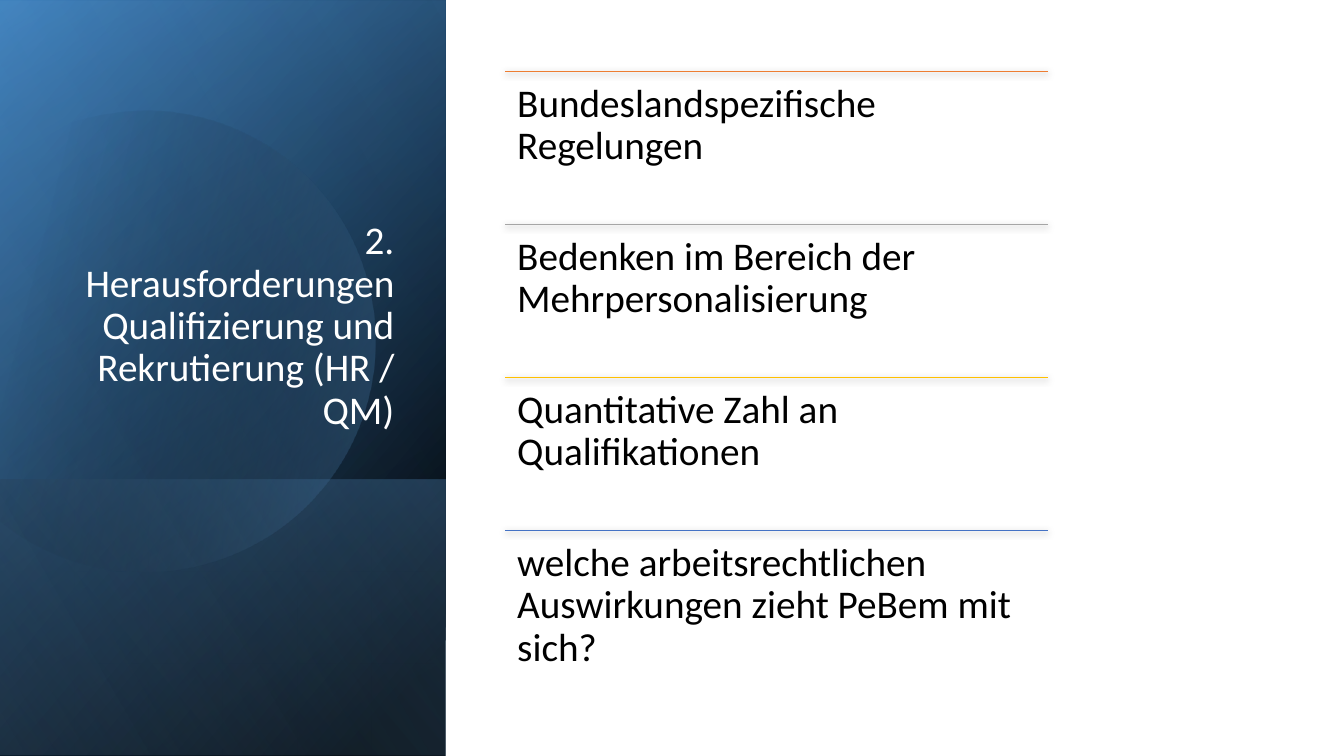
from math import cos, radians, sin

from lxml.etree import SubElement
from pptx import Presentation
from pptx.dml.color import RGBColor
from pptx.enum.shapes import MSO_CONNECTOR, MSO_SHAPE
from pptx.enum.text import MSO_ANCHOR, PP_ALIGN
from pptx.oxml.ns import qn
from pptx.util import Inches, Pt

BLACK = RGBColor(0x00, 0x00, 0x00)
WHITE = RGBColor(0xFF, 0xFF, 0xFF)
DEEP_BLUE = RGBColor(0x2E, 0x75, 0xB6)
BLUE = RGBColor(0x5B, 0x9B, 0xD5)
PALE_BLUE = RGBColor(0x9D, 0xC3, 0xE6)
ORANGE = RGBColor(0xED, 0x7D, 0x31)
GRAY = RGBColor(0xA5, 0xA5, 0xA5)
GOLD = RGBColor(0xFF, 0xC0, 0x00)
ROYAL_BLUE = RGBColor(0x44, 0x72, 0xC4)

FONT = "Calibri"
LIST_LEFT, LIST_TOP, LIST_WIDTH, LIST_HEIGHT = 5.01, 0.71, 5.38, 6.07

PANELS = [
    (-1.54, 1.54, 7.5, [(8, BLACK, 100), (100, DEEP_BLUE, 100)], 50),
    (-1.54, 1.55, 7.5, [(0, BLACK, 0), (99, BLUE, 46)], 30),
    (0.84, 3.92, 2.74, [(2, BLUE, 29), (100, BLACK, 30)], 130),
]
SHEEN = (-1.54, 1.53, 7.5, [(0, BLACK, 0), (99, PALE_BLUE, 11)], 120)

DISC_LEFT, DISC_TOP, DISC_WIDTH, DISC_HEIGHT = -0.55, 1.06, 4.27, 4.57
DISC_ROTATION = 343.9
DISC_STOPS = [(29, BLACK, 0), (100, BLUE, 43)]
DISC_OUTLINE = [
    ("moveTo", [(1.49, 1.1)]),
    ("cubicBezTo", [(2.46, 1.12), (3.35, 1.77), (3.63, 2.75)]),
    ("cubicBezTo", [(3.98, 3.97), (3.28, 5.23), (2.07, 5.58)]),
    ("cubicBezTo", [(1.31, 5.8), (0.53, 5.61), (-0.03, 5.14)]),
    ("lnTo", [(-0.15, 5.03)]),
    ("lnTo", [(-0.15, 1.75)]),
    ("lnTo", [(0, 1.61)]),
    ("cubicBezTo", [(0.23, 1.42), (0.5, 1.28), (0.8, 1.19)]),
    ("cubicBezTo", [(1.03, 1.13), (1.26, 1.1), (1.49, 1.1)]),
    ("close", []),
]

TITLE = "2. Herausforderungen Qualifizierung und Rekrutierung (HR / QM)"
CHALLENGES = [
    ("Bundeslandspezifische Regelungen", ORANGE),
    ("Bedenken im Bereich der Mehrpersonalisierung", GRAY),
    ("Quantitative Zahl an Qualifikationen", GOLD),
    ("welche arbeitsrechtlichen Auswirkungen zieht PeBem mit sich?", ROYAL_BLUE),
]


def add_color(parent, color, opacity):
    """Append a colour with an opacity in percent."""
    element = SubElement(parent, qn("a:srgbClr"), val=str(color))
    SubElement(element, qn("a:alpha"), val=str(opacity * 1000))


def fill_gradient(shape, stops, angle):
    """Give a shape a linear gradient and neither outline nor shadow."""
    shape.fill.gradient()
    gradient = shape._element.spPr.find(qn("a:gradFill"))
    for child in list(gradient):
        gradient.remove(child)
    gradient.set("rotWithShape", "1")
    stop_list = SubElement(gradient, qn("a:gsLst"))
    for position, color, opacity in stops:
        stop = SubElement(stop_list, qn("a:gs"), pos=str(position * 1000))
        add_color(stop, color, opacity)
    SubElement(gradient, qn("a:lin"), ang=str(angle * 60000), scaled="0")
    shape.line.fill.background()
    shape.shadow.inherit = False


def add_panel(slide, left, top, width, stops, angle):
    """Add a mirrored gradient rectangle turned by a quarter."""
    shape = slide.shapes.add_shape(
        MSO_SHAPE.RECTANGLE, Inches(left), Inches(top), Inches(width), Inches(4.42)
    )
    shape.rotation = 90
    shape._element.spPr.find(qn("a:xfrm")).set("flipH", "1")
    fill_gradient(shape, stops, angle)


def disc_point(x, y):
    """Return a slide point as a point in the unrotated box of the disc."""
    angle = radians(-DISC_ROTATION)
    x -= DISC_LEFT + DISC_WIDTH / 2
    y -= DISC_TOP + DISC_HEIGHT / 2
    return (
        Inches(DISC_WIDTH / 2 + x * cos(angle) - y * sin(angle)),
        Inches(DISC_HEIGHT / 2 + x * sin(angle) + y * cos(angle)),
    )


def add_disc(slide):
    """Add the translucent disc cut off at the left edge."""
    left, top = Inches(DISC_LEFT), Inches(DISC_TOP)
    right, bottom = left + Inches(DISC_WIDTH), top + Inches(DISC_HEIGHT)
    builder = slide.shapes.build_freeform(left, top)
    builder.add_line_segments([(right, top), (right, bottom), (left, bottom)])
    disc = builder.convert_to_shape()
    outline = next(disc._element.iter(qn("a:path")))
    for child in list(outline):
        outline.remove(child)
    for command, points in DISC_OUTLINE:
        segment = SubElement(outline, qn(f"a:{command}"))
        for point in points:
            x, y = disc_point(*point)
            SubElement(segment, qn("a:pt"), x=str(x), y=str(y))
    disc.rotation = DISC_ROTATION
    fill_gradient(disc, DISC_STOPS, 30)


def add_text(parent, text, left, top, width, height, *, color=BLACK, size=28,
             align=PP_ALIGN.LEFT, anchor=MSO_ANCHOR.TOP, inset=None, space_after=0):
    """Add a wrapped text box with one formatted paragraph."""
    box = parent.shapes.add_textbox(Inches(left), Inches(top), Inches(width), Inches(height))
    frame = box.text_frame
    frame.word_wrap = True
    frame.vertical_anchor = anchor
    if inset is not None:
        frame.margin_left = frame.margin_right = Inches(inset)
        frame.margin_top = frame.margin_bottom = Inches(inset)
    paragraph = frame.paragraphs[0]
    paragraph.alignment = align
    paragraph.line_spacing = 0.9
    paragraph.space_after = Pt(space_after)
    run = paragraph.add_run()
    run.text = text
    run.font.name = FONT
    run.font.size = Pt(size)
    run.font.color.rgb = color


def add_divider(parent, top, color):
    """Add a thin horizontal line with a soft shadow below."""
    line = parent.shapes.add_connector(
        MSO_CONNECTOR.STRAIGHT, Inches(LIST_LEFT), Inches(top),
        Inches(LIST_LEFT + LIST_WIDTH), Inches(top),
    )
    line.line.color.rgb = color
    line.line.width = Pt(0.5)
    effects = SubElement(line._element.spPr, qn("a:effectLst"))
    shadow = SubElement(
        effects, qn("a:outerShdw"), blurRad=str(Pt(4.5)), dist=str(Pt(1.5)),
        dir="5400000", algn="ctr", rotWithShape="0",
    )
    add_color(shadow, BLACK, 63)


def add_challenges(slide):
    """Add the grouped list of challenges in rows of equal height."""
    group = slide.shapes.add_group_shape()
    row_height = LIST_HEIGHT / len(CHALLENGES)
    for index, (text, color) in enumerate(CHALLENGES):
        top = LIST_TOP + index * row_height
        add_divider(group, top, color)
        add_text(group, text, LIST_LEFT, top, LIST_WIDTH, row_height,
                 inset=0.12, space_after=10)


def main():
    """Build and save the slide."""
    presentation = Presentation()
    presentation.slide_width = Inches(13.33)
    presentation.slide_height = Inches(7.5)
    slide = presentation.slides.add_slide(presentation.slide_layouts[6])
    for panel in PANELS:
        add_panel(slide, *panel)
    add_disc(slide)
    add_panel(slide, *SHEEN)
    add_text(slide, TITLE, 0.51, 0.64, 3.5, 3.7, color=WHITE,
             align=PP_ALIGN.RIGHT, anchor=MSO_ANCHOR.BOTTOM)
    add_challenges(slide)
    presentation.save("out.pptx")


if __name__ == "__main__":
    main()
